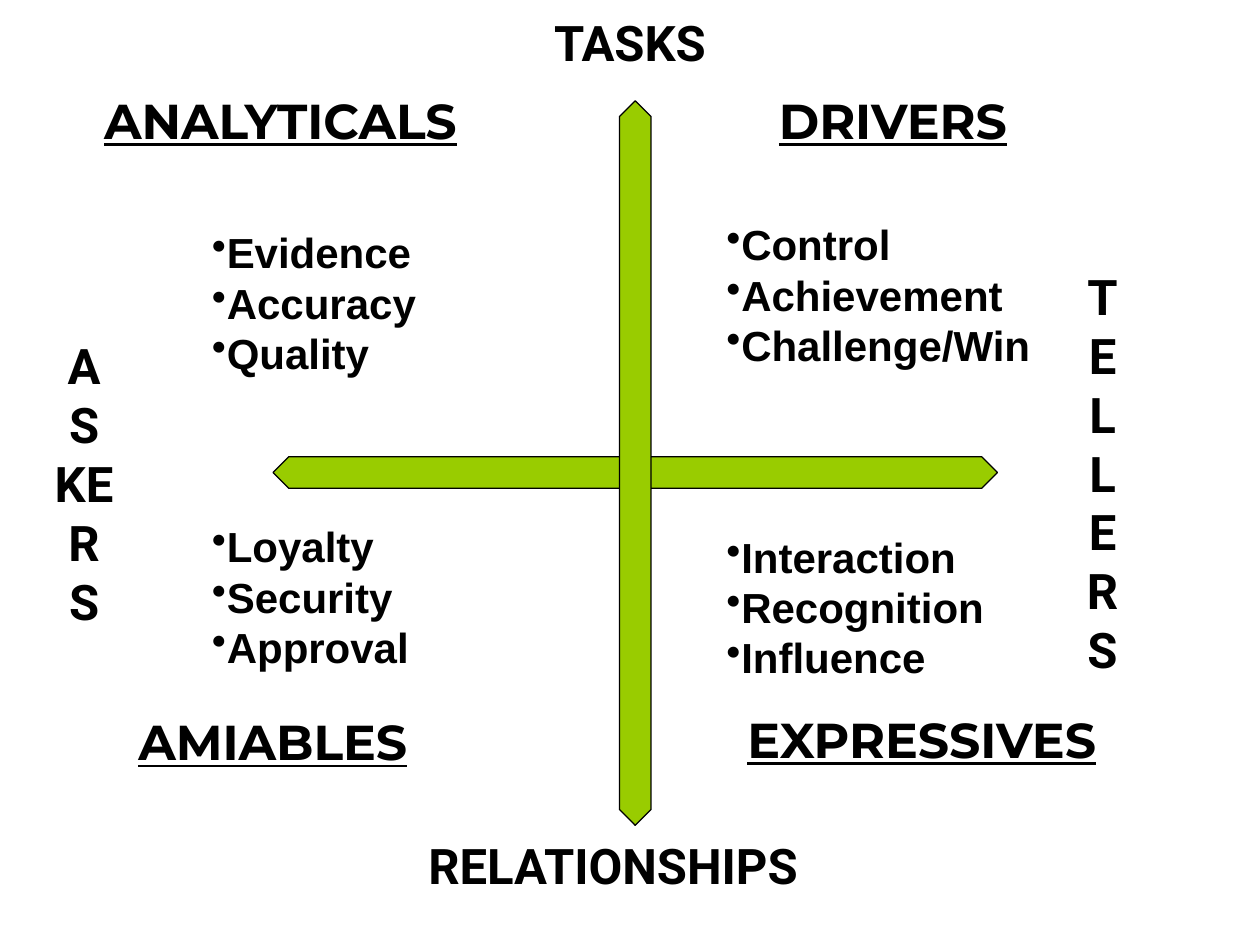
from dataclasses import dataclass
from typing import Any

from lxml import etree
from pptx import Presentation
from pptx.dml.color import RGBColor
from pptx.enum.shapes import MSO_SHAPE
from pptx.enum.text import MSO_ANCHOR, MSO_AUTO_SIZE, PP_ALIGN
from pptx.oxml.ns import qn
from pptx.util import Inches, Pt

ARROW = MSO_SHAPE.UP_DOWN_ARROW
TOP, MIDDLE = MSO_ANCHOR.TOP, MSO_ANCHOR.MIDDLE
LEFT, CENTER = PP_ALIGN.LEFT, PP_ALIGN.CENTER
NO_FIT, GROW = MSO_AUTO_SIZE.NONE, MSO_AUTO_SIZE.SHAPE_TO_FIT_TEXT

WIDTH, HEIGHT = Inches(10), Inches(7.5)
COLUMNS, ROWS = 120, 90
COLORS = {"text": "000000", "arrow": "99CC00", "outline": "000000"}

AXIS_FONT = {"name": "Roboto", "size": Pt(28), "bold": True}
HEADING_FONT = {"name": "Montserrat", "size": Pt(28), "bold": True, "underline": True}
TRAIT_FONT = {"name": "Arial", "size": Pt(24), "bold": True}

AXIS_FRAME = {"word_wrap": True, "auto_size": NO_FIT, "vertical_anchor": MIDDLE}
GROWING_FRAME = {"word_wrap": True, "auto_size": GROW, "vertical_anchor": TOP}


@dataclass(frozen=True)
class Area:
    column: float
    row: float
    columns: float
    rows: float

    def box(self) -> dict[str, int]:
        return {
            "left": round(WIDTH * self.column / COLUMNS),
            "top": round(HEIGHT * self.row / ROWS),
            "width": round(WIDTH * self.columns / COLUMNS),
            "height": round(HEIGHT * self.rows / ROWS),
        }


@dataclass(frozen=True)
class Quadrant:
    heading: str
    heading_area: Area
    traits: tuple[str, ...]
    traits_area: Area


TELLERS_AREA = Area(102, 0, 6, 90)
RELATIONSHIPS_AREA = Area(21, 79, 78, 11)
AXIS_LABELS = {"ASKERS": Area(4, 0, 8, 92), "TASKS": Area(18, 1, 84, 6)}
ARROWS = ((Area(59, 10.5, 3, 69), 270), (Area(59, 9.6, 3, 69), 0))
QUADRANTS = (
    Quadrant("DRIVERS", Area(73, 8, 29, 6.85),
             ("Control", "Achievement", "Challenge/Win"), Area(68, 20.25, 34, 15.75)),
    Quadrant("EXPRESSIVES", Area(70, 67, 44, 6.85),
             ("Interaction", "Recognition", "Influence"), Area(68, 50, 32, 15.75)),
    Quadrant("ANALYTICALS", Area(8.75, 8, 39.25, 6.85),
             ("Evidence", "Accuracy", "Quality"), Area(19, 21, 35, 15.75)),
    Quadrant("AMIABLES", Area(12, 67.2, 38, 6.85),
             ("Loyalty", "Security", "Approval"), Area(19, 49, 32, 15.75)),
)


def apply_format(target: Any, values: dict[str, Any]) -> None:
    for name, value in values.items():
        setattr(target, name, value)


def write_text(shape: Any, lines: tuple[str, ...], font: dict[str, Any],
               frame: dict[str, Any], alignment: Any = LEFT) -> None:
    text_frame = shape.text_frame
    text_frame.text = "\n".join(lines)
    apply_format(text_frame, frame)
    for paragraph in text_frame.paragraphs:
        paragraph.alignment = alignment
        run_font = paragraph.runs[0].font
        apply_format(run_font, font)
        run_font.color.rgb = RGBColor.from_string(COLORS["text"])


def add_label(slide: Any, area: Area, lines: tuple[str, ...], font: dict[str, Any],
              frame: dict[str, Any], alignment: Any = LEFT) -> Any:
    shape = slide.shapes.add_textbox(**area.box())
    write_text(shape, lines, font, frame, alignment)
    return shape


def add_bullets(shape: Any) -> None:
    for paragraph in shape.text_frame.paragraphs:
        properties = paragraph._p.get_or_add_pPr()
        etree.SubElement(properties, qn("a:buChar")).set("char", "•")


def add_arrow(slide: Any, area: Area, rotation: float) -> None:
    shape = slide.shapes.add_shape(ARROW, **area.box())
    shape.rotation = rotation
    shape.adjustments[0] = 0.875
    shape.adjustments[1] = 1.82
    shape.shadow.inherit = False
    shape.fill.solid()
    shape.fill.fore_color.rgb = RGBColor.from_string(COLORS["arrow"])
    shape.line.color.rgb = RGBColor.from_string(COLORS["outline"])
    shape.line.width = Pt(0.75)


def add_quadrant(slide: Any, quadrant: Quadrant) -> None:
    add_label(slide, quadrant.heading_area, (quadrant.heading,), HEADING_FONT, GROWING_FRAME)
    traits = add_label(slide, quadrant.traits_area, quadrant.traits, TRAIT_FONT, GROWING_FRAME)
    add_bullets(traits)


def main() -> None:
    presentation = Presentation()
    apply_format(presentation, {"slide_width": WIDTH, "slide_height": HEIGHT})
    slide = presentation.slides.add_slide(presentation.slide_layouts[5])

    title = slide.shapes.title
    apply_format(title, TELLERS_AREA.box())
    write_text(title, ("TELLERS",), AXIS_FONT, AXIS_FRAME, CENTER)

    for area, rotation in ARROWS:
        add_arrow(slide, area, rotation)
    for text, area in AXIS_LABELS.items():
        add_label(slide, area, (text,), AXIS_FONT, AXIS_FRAME, CENTER)
    relationships_frame = AXIS_FRAME | {"vertical_anchor": TOP, "margin_left": Inches(1.65)}
    add_label(slide, RELATIONSHIPS_AREA, ("RELATIONSHIPS",), AXIS_FONT, relationships_frame)
    for quadrant in QUADRANTS:
        add_quadrant(slide, quadrant)

    presentation.save("out.pptx")


if __name__ == "__main__":
    main()
